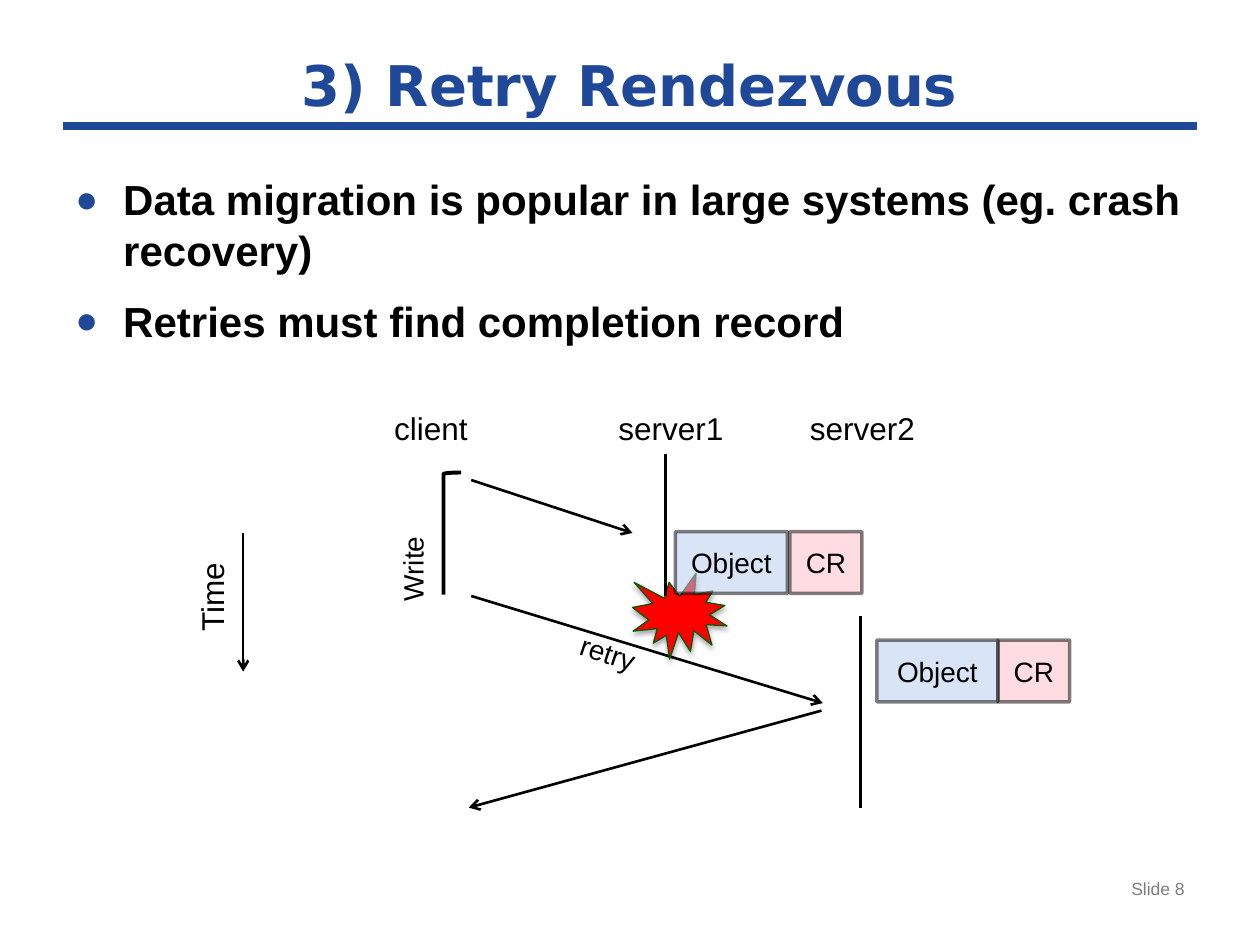
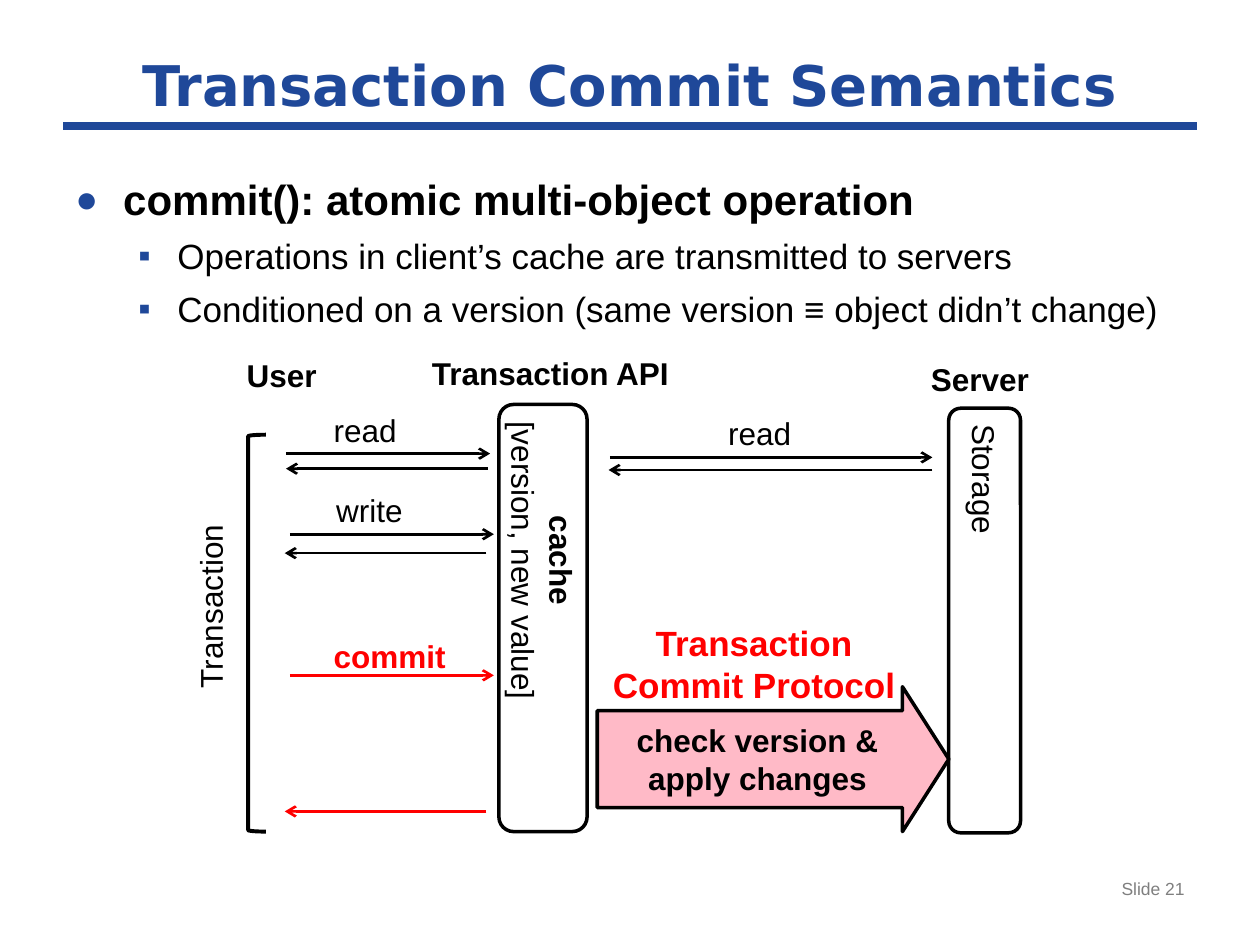
from lxml.etree import SubElement
from pptx import Presentation
from pptx.dml.color import RGBColor
from pptx.enum.shapes import MSO_CONNECTOR, MSO_SHAPE as SHAPE
from pptx.enum.text import MSO_ANCHOR as ANCHOR, MSO_AUTO_SIZE as AUTO_SIZE, PP_ALIGN as ALIGN
from pptx.oxml.ns import qn
from pptx.util import Inches, Pt

BLUE = RGBColor(0x1F, 0x48, 0x99)
BLACK = RGBColor(0, 0, 0)
WHITE = RGBColor(0xFF, 0xFF, 0xFF)
GRAY = RGBColor(0x7F, 0x7F, 0x7F)
RED = RGBColor(0xFF, 0, 0)
PINK = RGBColor(0xFF, 0xBA, 0xC7)
PALE_BLUE = RGBColor(0xB7, 0xCB, 0xF0)
GREEN = RGBColor(0x09, 0x59, 0x09)
BODY_FONT, TITLE_FONT = "Arial", "DejaVu Sans"
BULLETS = (("●", 90, 0.38, 0.38, 12, 24), ("▪", 100, 0.81, 0.31, 6, 20))


def add_run(paragraph, text, size, color=BLACK, bold=False, font=BODY_FONT):
    """Add one formatted run to a paragraph."""
    run = paragraph.add_run()
    run.text = text
    run.font.size = Pt(size)
    run.font.name = font
    run.font.bold = bold
    run.font.color.rgb = color


def add_lines(frame, lines, size, align=ALIGN.CENTER, color=BLACK):
    """Fill a text frame with (text, bold) lines."""
    for number, (text, bold) in enumerate(lines):
        paragraph = frame.add_paragraph() if number else frame.paragraphs[0]
        paragraph.alignment = align
        add_run(paragraph, text, size, color, bold)


def set_vertical(frame):
    """Turn the text of a frame to vertical writing."""
    frame._txBody.bodyPr.set("vert", "eaVert")


def set_opacity(color_parent, percent):
    """Make the solid colour inside an element partly transparent."""
    color = next(color_parent.iter(qn("a:srgbClr")))
    SubElement(color, qn("a:alpha"), val=str(percent * 1000))


def add_label(shapes, text, left, top, width, height=0.4, size=18, bold=False,
              color=BLACK, align=ALIGN.LEFT, rotation=0, vertical=False, wrap=True):
    """Add a free text label."""
    label = shapes.add_textbox(Inches(left), Inches(top), Inches(width), Inches(height))
    label.rotation = rotation
    frame = label.text_frame
    frame.word_wrap = wrap
    frame.auto_size = AUTO_SIZE.SHAPE_TO_FIT_TEXT
    if vertical:
        set_vertical(frame)
    add_lines(frame, [(text, bold)], size, align, color)


def add_line(shapes, start, end, color=BLACK, width=1.5, arrow=False):
    """Add a straight line, with an arrowhead at its end if asked."""
    points = [Inches(length) for length in (*start, *end)]
    line = shapes.add_connector(MSO_CONNECTOR.STRAIGHT, *points)
    line.line.color.rgb = color
    line.line.width = Pt(width)
    if arrow:
        SubElement(line.line._get_or_add_ln(), qn("a:tailEnd"), type="arrow")
    SubElement(line._element.spPr, qn("a:effectLst"))


def add_arrow(shapes, start, end, color=BLACK):
    """Add a message arrow."""
    add_line(shapes, start, end, color, arrow=True)


def add_box(shapes, kind, left, top, width, height, fill=None, line=BLACK,
            line_width=2, lines=(), size=18):
    """Add a preset shape with optional fill, outline and centred text."""
    box = shapes.add_shape(kind, Inches(left), Inches(top), Inches(width), Inches(height))
    box.shadow.inherit = False
    if fill is None:
        box.fill.background()
    else:
        box.fill.solid()
        box.fill.fore_color.rgb = fill
    if line is None:
        box.line.fill.background()
    else:
        box.line.color.rgb = line
        box.line.width = Pt(line_width)
    box.text_frame.vertical_anchor = ANCHOR.MIDDLE
    add_lines(box.text_frame, lines, size)
    return box


def add_record(shapes, text, left, top, width, fill):
    """Add a half-transparent storage cell."""
    record = add_box(shapes, SHAPE.RECTANGLE, left, top, width, 0.49, fill,
                     lines=[(text, False)], size=16)
    properties = record._element.spPr
    set_opacity(properties.find(qn("a:solidFill")), 50)
    set_opacity(properties.find(qn("a:ln")), 50)


def add_bracket(shapes, left, top, height):
    """Add a bracket that opens to the right."""
    add_box(shapes, SHAPE.RIGHT_BRACKET, left, top, 0.14, height, line_width=2.25).rotation = 180


def add_lifeline(shapes, left, top, width, height, lines):
    """Add a rounded column with vertical text."""
    column = add_box(shapes, SHAPE.ROUNDED_RECTANGLE, left, top, width, height, WHITE, lines=lines)
    set_vertical(column.text_frame)


def add_crash(shapes):
    """Add the burst that marks the server crash."""
    burst = add_box(shapes, SHAPE.EXPLOSION1, 5.02, 4.55, 0.75, 0.68, RED, GREEN, 0.75)
    effects = burst._element.spPr.find(qn("a:effectLst"))
    shadow = SubElement(effects, qn("a:outerShdw"), blurRad=str(Pt(3.1)), dist=str(Pt(1.8)),
                        dir="5400000", rotWithShape="0")
    SubElement(shadow, qn("a:srgbClr"), val=str(BLACK))
    set_opacity(shadow, 35)


def add_bullets(shapes, items, height):
    """Add the bulleted (level, text) items under the title."""
    area = shapes.add_textbox(Inches(0.5), Inches(1.33), Inches(9), Inches(height))
    frame = area.text_frame
    frame.word_wrap = True
    for number, (level, text) in enumerate(items):
        mark, percent, margin, hanging, before, size = BULLETS[level]
        paragraph = frame.add_paragraph() if number else frame.paragraphs[0]
        paragraph.level = level
        paragraph.space_before = Pt(before)
        add_run(paragraph, text, size, bold=level == 0)
        properties = paragraph._p.get_or_add_pPr()
        properties.set("marL", str(Inches(margin)))
        properties.set("indent", str(-Inches(hanging)))
        SubElement(SubElement(properties, qn("a:buClr")), qn("a:srgbClr"), val=str(BLUE))
        SubElement(properties, qn("a:buSzPct"), val=str(percent * 1000))
        SubElement(properties, qn("a:buFont"), typeface=BODY_FONT)
        SubElement(properties, qn("a:buChar"), char=mark)


def start_slide(deck, title, number):
    """Add a slide with its title, rule and number, and return its shapes."""
    shapes = deck.slides.add_slide(deck.slide_layouts[5]).shapes
    heading = shapes.title
    heading.left, heading.top = Inches(0.5), Inches(0.33)
    heading.width, heading.height = Inches(9), Inches(0.67)
    frame = heading.text_frame
    frame.auto_size = AUTO_SIZE.NONE
    frame.vertical_anchor = ANCHOR.MIDDLE
    frame.paragraphs[0].alignment = ALIGN.CENTER
    add_run(frame.paragraphs[0], title, 32, BLUE, True, TITLE_FONT)
    add_line(shapes, (0.5, 1), (9.5, 1), BLUE, 4.5)
    footer = shapes.add_textbox(Inches(7.17), Inches(6.92), Inches(2.33), Inches(0.43))
    add_lines(footer.text_frame, [(f"Slide {number}", False)], 10, ALIGN.RIGHT, GRAY)
    return shapes


def build_retry_slide(deck):
    """Build the slide on finding completion records after a crash."""
    shapes = start_slide(deck, "3) Retry Rendezvous", 8)
    add_bullets(shapes, [
        (0, "Data migration is popular in large systems (eg. crash recovery)"),
        (0, "Retries must find completion record"),
    ], 5.37)
    add_arrow(shapes, (1.93, 4.23), (1.93, 5.33))
    add_label(shapes, "Time", 1.48, 4.32, 0.5, 0.79, rotation=180, vertical=True)
    add_label(shapes, "client", 3.03, 3.2, 1.17)
    for server, left in (("server1", 4.81), ("server2", 6.33)):
        add_label(shapes, server, left, 3.2, 1.04, wrap=False)
    for start, end in (((3.74, 3.81), (5.02, 4.23)), ((3.74, 4.73), (6.53, 5.58)),
                       ((6.52, 5.64), (3.72, 6.41))):
        add_arrow(shapes, start, end)
    add_record(shapes, "CR", 6.27, 4.22, 0.57, PINK)
    add_crash(shapes)
    add_bracket(shapes, 3.52, 3.75, 2.66)
    add_label(shapes, "Write", 2.57, 4.33, 1.41, 0.37, 16, align=ALIGN.CENTER, rotation=270)
    add_record(shapes, "CR", 7.92, 5.08, 0.57, PINK)
    add_line(shapes, (5.28, 3.6), (5.28, 4.73))
    add_line(shapes, (6.83, 4.89), (6.83, 6.41))
    add_label(shapes, "retry", 4.5, 5.03, 0.85, 0.37, 16, rotation=18.4)
    add_record(shapes, "Object", 5.36, 4.22, 0.89, PALE_BLUE)
    add_record(shapes, "Object", 6.96, 5.08, 0.96, PALE_BLUE)
    add_box(shapes, SHAPE.RECTANGLE, 3.44, 4.72, 0.27, 1.86, WHITE, None)


def build_commit_slide(deck):
    """Build the slide on the semantics of commit."""
    shapes = start_slide(deck, "Transaction Commit Semantics", 21)
    add_bullets(shapes, [
        (0, "commit(): atomic multi-object operation"),
        (1, "Operations in client’s cache are transmitted to servers"),
        (1, "Conditioned on a version (same version ≡ object didn’t change)"),
    ], 1.81)
    add_label(shapes, "Transaction", 1.47, 3.85, 0.5, 1.71, rotation=180, vertical=True)
    add_bracket(shapes, 1.97, 3.45, 3.15)
    for role, left, top, width in (("User", 1.86, 2.78, 1.17),
                                   ("Transaction API", 3.33, 2.76, 2.26),
                                   ("Server", 7.29, 2.81, 1.12)):
        add_label(shapes, role, left, top, width, bold=True)
    add_lifeline(shapes, 3.96, 3.21, 0.7, 3.39, [("cache", True), ("[version, new value]", False)])
    add_lifeline(shapes, 7.53, 3.24, 0.57, 3.37, [("Storage", False)])
    for left, right, y, color in ((2.27, 3.89, 3.6, BLACK), (2.3, 3.92, 4.24, BLACK),
                                  (2.3, 3.92, 5.36, RED)):
        add_arrow(shapes, (left, y), (right, y), color)
    for right, left, y, color in ((3.87, 2.27, 3.72, BLACK), (3.86, 2.26, 4.39, BLACK),
                                  (3.86, 2.26, 6.44, RED)):
        add_arrow(shapes, (right, y), (left, y), color)
    add_label(shapes, "read", 2.55, 3.21, 1.02)
    add_label(shapes, "write", 2.57, 3.85, 1.02)
    server_read = shapes.add_group_shape().shapes
    add_arrow(server_read, (4.84, 3.63), (7.4, 3.63))
    add_label(server_read, "read", 5.68, 3.24, 1.22)
    add_arrow(server_read, (7.4, 3.73), (4.83, 3.73))
    add_label(shapes, "Transaction Commit Protocol", 4.75, 4.88, 2.47, 0.77, 20, True, RED,
              ALIGN.CENTER)
    protocol = add_box(shapes, SHAPE.RIGHT_ARROW, 4.74, 5.45, 2.79, 1.15, PINK,
                       lines=[("check version &", True), ("apply changes", True)])
    protocol.adjustments[0], protocol.adjustments[1] = 0.67, 0.32
    add_label(shapes, "commit", 2.55, 5.01, 1.15, bold=True, color=RED)


def main():
    """Build and save the deck."""
    deck = Presentation()
    deck.slide_width, deck.slide_height = Inches(10), Inches(7.5)
    build_retry_slide(deck)
    build_commit_slide(deck)
    deck.save("out.pptx")


if __name__ == "__main__":
    main()
